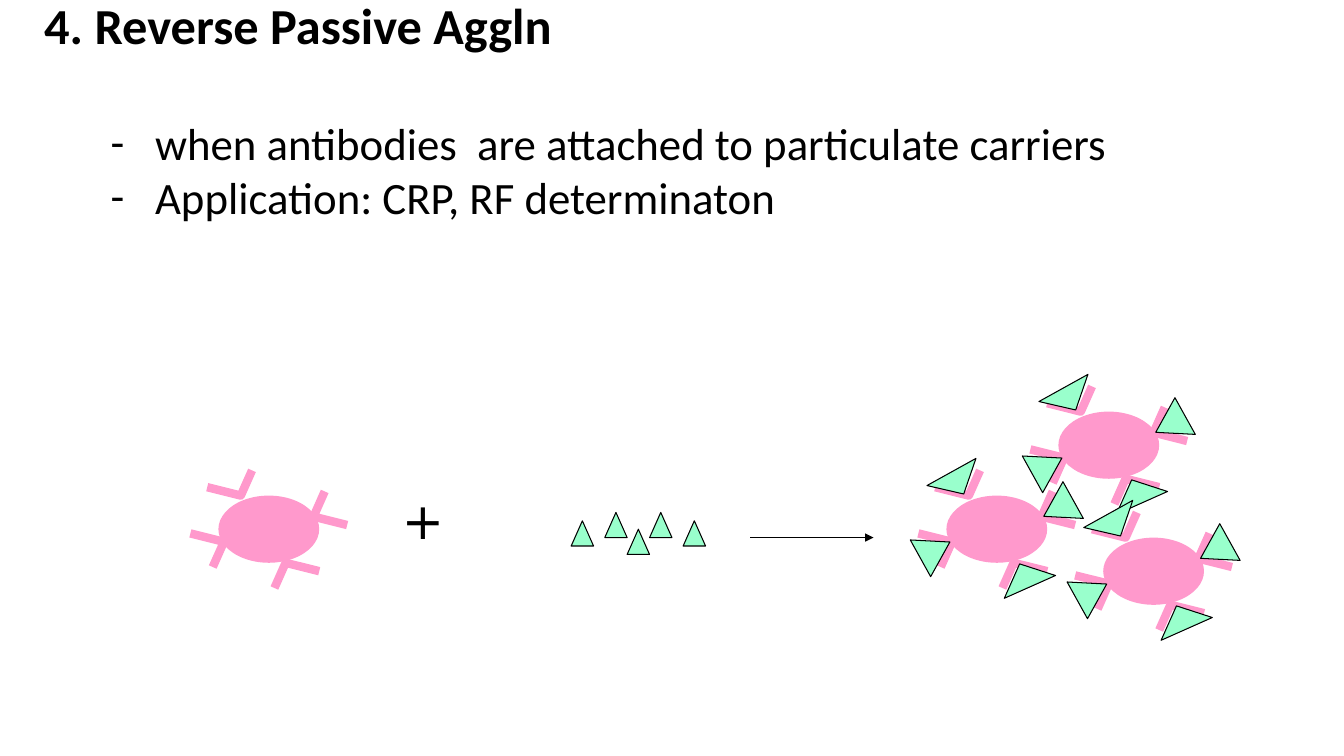
from dataclasses import dataclass

from lxml.etree import SubElement
from pptx import Presentation
from pptx.dml.color import RGBColor
from pptx.enum.shapes import MSO_CONNECTOR, MSO_SHAPE
from pptx.enum.text import MSO_AUTO_SIZE
from pptx.oxml.ns import qn
from pptx.util import Inches, Pt


@dataclass(frozen=True)
class Theme:
    ink: RGBColor = RGBColor(0, 0, 0)
    carrier: RGBColor = RGBColor(0xFF, 0x99, 0xCC)
    antigen: RGBColor = RGBColor(0x99, 0xFF, 0xCC)
    font: str = "Calibri"
    symbol_font: str = "DejaVu Sans"
    title: Pt = Pt(36)
    body: Pt = Pt(32)
    thin: Pt = Pt(0.75)
    arm: Pt = Pt(6)


@dataclass(frozen=True)
class Box:
    left: float
    top: float
    width: float
    height: float

    def emu(self):
        return (col(self.left), row(self.top), col(self.width), row(self.height))


THEME = Theme()
COLUMNS, ROWS = 120, 90
SLIDE_WIDTH, SLIDE_HEIGHT = Inches(13.33), Inches(7.5)

ARMS = [
    ([(-1, -1), (2, 0), (3, -3)], (5, 3), 151),
    ([(-0.5, 8.5), (0.5, 5.5), (-2.5, 4.5)], (3.75, 4), 61),
    ([(9.5, -0.5), (8.5, 2.5), (11.5, 3.5)], (3.75, 4), 241),
    ([(9, 9), (6, 8), (5, 11)], (5, 3), 336),
]
FREE_ANTIGENS = [(0, 1), (10, 1), (7, 0), (3, 0), (5, 2)]
CLUSTER = [(0, 10), (10, 0), (14, 15)]


def col(count):
    return round(SLIDE_WIDTH * count / COLUMNS)


def row(count):
    return round(SLIDE_HEIGHT * count / ROWS)


def style(paragraph, size, font=THEME.font, bold=False):
    paragraph.font.size = size
    for run in paragraph.runs:
        run.font.name, run.font.size, run.font.bold = font, size, bold
        run.font.color.rgb = THEME.ink


def indent(paragraph, margin, hanging=0):
    properties = paragraph._p.get_or_add_pPr()
    properties.set("marL", str(Inches(margin)))
    properties.set("indent", str(-Inches(hanging)))
    if hanging:
        SubElement(properties, qn("a:buFont")).set("typeface", THEME.font)
        SubElement(properties, qn("a:buChar")).set("char", "-")


def add_heading(slide, box):
    frame = slide.shapes.add_textbox(*box.emu()).text_frame
    frame.word_wrap = True
    frame.text = "\n".join([
        "4. Reverse Passive Aggln",
        "when antibodies  are attached to particulate carriers",
        "Application: CRP, RF determinaton",
    ])
    title, *points = frame.paragraphs
    indent(title, 0.34)
    style(title, THEME.title, bold=True)
    for point in points:
        indent(point, 1.44, 0.44)
        style(point, THEME.body)
    points[0].space_before = Pt(44)


def add_plus(slide, box):
    frame = slide.shapes.add_textbox(*box.emu()).text_frame
    frame.word_wrap = False
    frame.auto_size = MSO_AUTO_SIZE.SHAPE_TO_FIT_TEXT
    frame.text = "+"
    style(frame.paragraphs[0], THEME.title, THEME.symbol_font)


def add_antigen(slide, box, rotation=0):
    antigen = slide.shapes.add_shape(MSO_SHAPE.FLOWCHART_EXTRACT, *box.emu())
    antigen.shadow.inherit = False
    antigen.rotation = rotation
    antigen.fill.solid()
    antigen.fill.fore_color.rgb = THEME.antigen
    antigen.line.color.rgb = THEME.ink
    antigen.line.width = THEME.thin


def add_carrier(slide, box):
    body = slide.shapes.add_shape(MSO_SHAPE.OVAL, *box.emu())
    body.shadow.inherit = False
    body.fill.solid()
    body.fill.fore_color.rgb = THEME.carrier
    body.line.fill.background()
    for points, _, _ in ARMS:
        start, *rest = [(col(box.left + x), row(box.top + y)) for x, y in points]
        builder = slide.shapes.build_freeform(*start)
        builder.add_line_segments(rest, close=False)
        antibody = builder.convert_to_shape()
        antibody.shadow.inherit = False
        antibody.fill.background()
        antibody.line.color.rgb = THEME.carrier
        antibody.line.width = THEME.arm


def add_bound_carrier(slide, box):
    add_carrier(slide, box)
    for points, (width, height), rotation in ARMS:
        xs, ys = zip(*points)
        center_x = box.left + (min(xs) + max(xs)) / 2
        center_y = box.top + (min(ys) + max(ys)) / 2
        add_antigen(slide, Box(center_x - width / 2, center_y - height / 2, width, height), rotation)


def add_free_antigens(slide, box):
    for x, y in FREE_ANTIGENS:
        add_antigen(slide, Box(box.left + x, box.top + y, box.width / 6, box.height * 0.6))


def add_reaction_arrow(slide, box):
    left, top, width, height = box.emu()
    arrow = slide.shapes.add_connector(
        MSO_CONNECTOR.STRAIGHT, left, top, left + width, top + height)
    arrow.line.color.rgb = THEME.ink
    arrow.line.width = THEME.thin
    SubElement(arrow.line._get_or_add_ln(), qn("a:tailEnd")).set("type", "triangle")
    SubElement(arrow._element.spPr, qn("a:effectLst"))


def add_agglutinate(slide, box):
    for x, y in CLUSTER:
        add_bound_carrier(slide, Box(box.left + x, box.top + y, 9, 8))


def main():
    presentation = Presentation()
    presentation.slide_width, presentation.slide_height = SLIDE_WIDTH, SLIDE_HEIGHT
    slide = presentation.slides.add_slide(presentation.slide_layouts[6])
    add_heading(slide, Box(0, -1.3, COLUMNS, 28.7))
    add_plus(slide, Box(35, 57.6, 5.6, 8.5))
    add_carrier(slide, Box(19.5, 59, 9, 8))
    add_reaction_arrow(slide, Box(67, 64, 11, 0))
    add_free_antigens(slide, Box(51, 61, 12, 5))
    add_agglutinate(slide, Box(84.5, 49, 23, 23))
    presentation.save("out.pptx")


if __name__ == "__main__":
    main()
